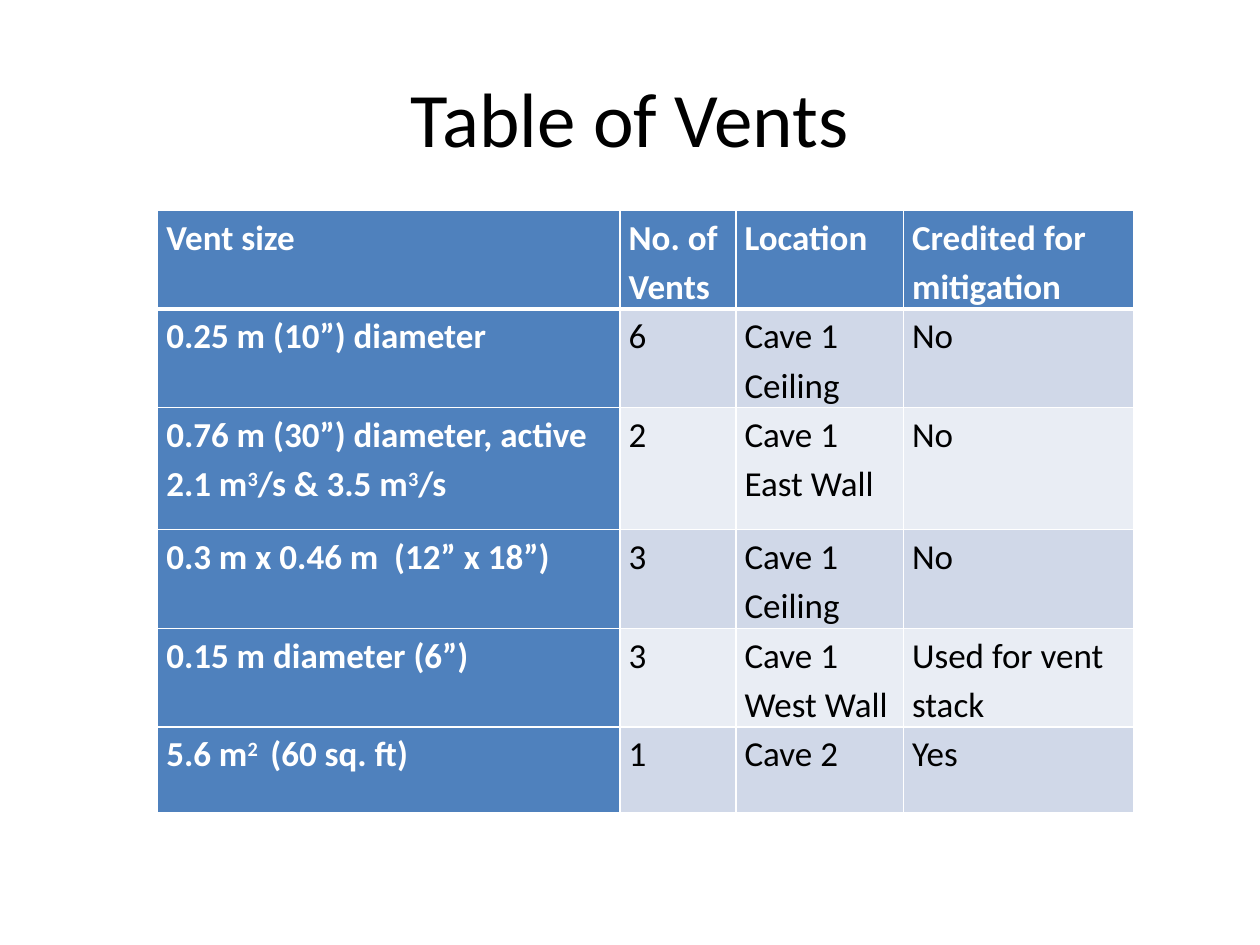
from lxml.etree import SubElement
from pptx import Presentation
from pptx.dml.color import RGBColor
from pptx.enum.text import MSO_ANCHOR, PP_ALIGN
from pptx.oxml.ns import qn
from pptx.util import Inches, Pt

FONT = "Calibri"
WHITE, BLACK, BLUE = "FFFFFF", "000000", "4F81BD"
BANDS = ("D0D8E8", "E9EDF4")
COLUMN_WIDTHS = (3.67, 0.92, 1.33, 1.83)
ROW_HEIGHTS = (0.68, 0.68, 0.97, 0.68, 0.68, 0.68)
VENTS = (
    ("Vent size", "No. of  Vents", "Location", "Credited for mitigation"),
    ("0.25 m (10”) diameter", "6", "Cave 1 Ceiling", "No"),
    ("0.76 m (30”) diameter, active\n2.1 m^3^/s & 3.5 m^3^/s", "2", "Cave 1 East Wall", "No"),
    ("0.3 m x 0.46 m  (12” x 18”)", "3", "Cave 1 Ceiling", "No"),
    ("0.15 m diameter (6”)", "3", "Cave 1 West Wall", "Used for vent stack"),
    ("5.6 m^2 ^ (60 sq. ft)", "1", "Cave 2", "Yes"),
)


def rgb(color):
    """Turn a hex string into a colour."""
    return RGBColor.from_string(color)


def add_run(paragraph, text, size, color, bold=False, superscript=False):
    """Append one formatted run to a paragraph."""
    run = paragraph.add_run()
    run.text = text
    run.font.name = FONT
    run.font.size = Pt(size)
    run.font.bold = bold
    run.font.color.rgb = rgb(color)
    if superscript:
        run._r.get_or_add_rPr().set("baseline", "30000")


def set_borders(cell, top, bottom):
    """Draw white cell borders, with top and bottom widths in points."""
    properties = cell._tc.get_or_add_tcPr()
    for side, width in (("L", 1), ("R", 1), ("T", top), ("B", bottom)):
        line = SubElement(properties, qn(f"a:ln{side}"), w=str(Pt(width)))
        fill = SubElement(line, qn("a:solidFill"))
        SubElement(fill, qn("a:srgbClr"), val=WHITE)


def fill_cell(cell, text, color, bold):
    """Write cell text, where carets enclose superscripts."""
    cell.margin_left = cell.margin_right = Inches(0.07)
    cell.margin_top = cell.margin_bottom = 0
    frame = cell.text_frame
    for index, line in enumerate(text.split("\n")):
        paragraph = frame.add_paragraph() if index else frame.paragraphs[0]
        paragraph.line_spacing = 1.15
        for part, piece in enumerate(line.split("^")):
            add_run(paragraph, piece, 20, color, bold, part % 2 == 1)


def place_title(slide, left, top, width, height):
    """Place and write the slide title."""
    title = slide.shapes.title
    title.left, title.top = Inches(left), Inches(top)
    title.width, title.height = Inches(width), Inches(height)
    frame = title.text_frame
    frame.vertical_anchor = MSO_ANCHOR.MIDDLE
    paragraph = frame.paragraphs[0]
    paragraph.alignment = PP_ALIGN.CENTER
    add_run(paragraph, "Table of Vents", 44, BLACK)


def add_vent_table(slide, left, top, width, height):
    """Add the vent table with a blue header row and first column."""
    table = slide.shapes.add_table(
        len(VENTS), len(COLUMN_WIDTHS),
        Inches(left), Inches(top), Inches(width), Inches(height),
    ).table
    table.first_col = True
    for column, column_width in zip(table.columns, COLUMN_WIDTHS):
        column.width = Inches(column_width)
    for row_index, texts in enumerate(VENTS):
        table.rows[row_index].height = Inches(ROW_HEIGHTS[row_index])
        for column_index, text in enumerate(texts):
            cell = table.cell(row_index, column_index)
            heading = row_index == 0 or column_index == 0
            set_borders(cell, 3 if row_index == 1 else 1, 3 if row_index == 0 else 1)
            cell.fill.solid()
            cell.fill.fore_color.rgb = rgb(BLUE if heading else BANDS[(row_index - 1) % 2])
            fill_cell(cell, text, WHITE if heading else BLACK, heading)


def main():
    """Build and save the presentation."""
    presentation = Presentation()
    presentation.slide_width, presentation.slide_height = Inches(10), Inches(7.5)
    slide = presentation.slides.add_slide(presentation.slide_layouts[5])
    slide.background.fill.solid()
    slide.background.fill.fore_color.rgb = rgb(WHITE)
    place_title(slide, 0.5, 0.3, 9, 1.25)
    add_vent_table(slide, 1.25, 1.67, sum(COLUMN_WIDTHS), sum(ROW_HEIGHTS))
    presentation.save("out.pptx")


if __name__ == "__main__":
    main()
